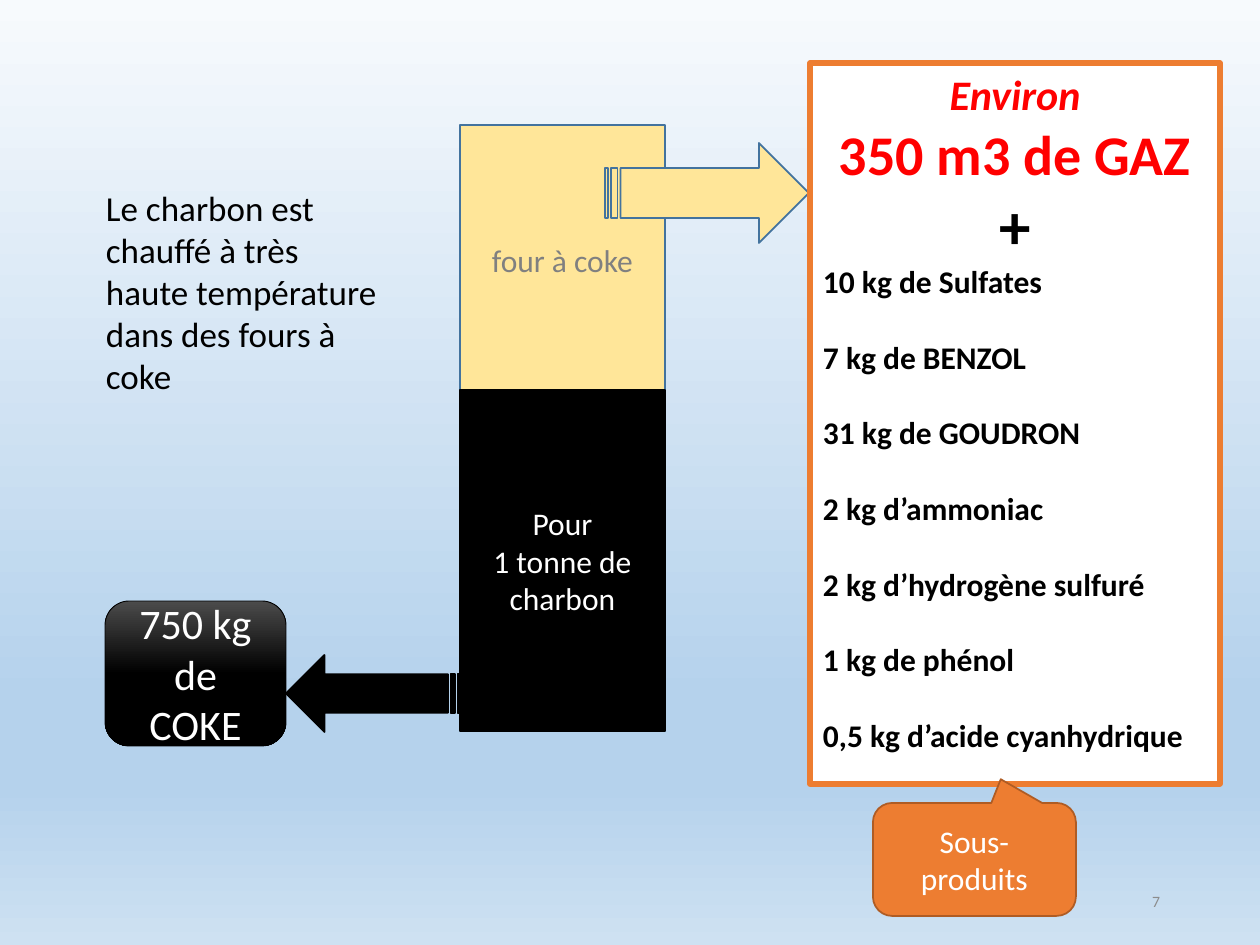
import pptx
import pptx.util
import pptx.dml.color
import pptx.enum.shapes
import pptx.enum.text
import pptx.oxml.ns
import lxml.etree

PX = 914400 // 126
FONT = "Calibri"
HEX = {
    "black": "000000", "white": "FFFFFF", "red": "FF0000", "gray": "808080",
    "pale": "8C8C8C", "sand": "FFE699", "blue": "43739E",
    "orange": "ED7D31", "rust": "AF5C24",
}
SKY = [(0, "F7FAFD"), (74, "B5D2EC"), (83, "B5D2EC"), (100, "CEE1F2")]
COAL = [(0, "4B4B4B"), (50, "000000"), (100, "000000")]
KIND = pptx.enum.shapes.MSO_SHAPE
ALIGN = pptx.enum.text.PP_ALIGN
ANCHOR = pptx.enum.text.MSO_ANCHOR
GOODS = [
    "10 kg de Sulfates", "7 kg de BENZOL", "31 kg de GOUDRON",
    "2 kg d’ammoniac", "2 kg d’hydrogène sulfuré", "1 kg de phénol",
    "0,5 kg d’acide cyanhydrique",
]


def tint(name):
    return pptx.dml.color.RGBColor.from_string(HEX[name])


def shade(fill, root, stops):
    """Fill from top to bottom with (percent, hex) stops."""
    qn = pptx.oxml.ns.qn
    fill.gradient()
    fill.gradient_angle = 270
    group = root.find(".//" + qn("a:gsLst"))
    for stop in list(group):
        group.remove(stop)
    for pos, code in stops:
        stop = lxml.etree.SubElement(group, qn("a:gs"), pos=str(pos * 1000))
        lxml.etree.SubElement(stop, qn("a:srgbClr"), val=code)


def draw(slide, kind, box, fill, line, width=1):
    """Add a preset shape; fill is a colour name or a list of stops."""
    shape = slide.shapes.add_shape(kind, *(n * PX for n in box))
    shape.shadow.inherit = False
    if isinstance(fill, list):
        shade(shape.fill, shape.element, fill)
    else:
        shape.fill.solid()
        shape.fill.fore_color.rgb = tint(fill)
    shape.line.color.rgb = tint(line)
    shape.line.width = pptx.util.Pt(width)
    return shape


def label(slide, box):
    return slide.shapes.add_textbox(*(n * PX for n in box))


def frame(shape, anchor=ANCHOR.MIDDLE, top=6):
    """Set up the text frame of a shape."""
    text = shape.text_frame
    form = {
        "word_wrap": True, "vertical_anchor": anchor, "margin_top": top * PX,
        "margin_bottom": 6 * PX, "margin_left": 13 * PX, "margin_right": 13 * PX,
    }
    for key, val in form.items():
        setattr(text, key, val)
    return text


def write(para, words, size, color, align=ALIGN.CENTER, **form):
    """Write one paragraph, with a line break at each newline."""
    para.alignment = align
    form.update(name=FONT, size=pptx.util.Pt(size))
    for num, part in enumerate(words.split("\n")):
        if num:
            para.add_line_break()
        run = para.add_run()
        run.text = part
        run.font.color.rgb = tint(color)
        for key, val in form.items():
            setattr(run.font, key, val)


def list_goods(text):
    """Gas yield, then the by-products."""
    write(text.paragraphs[0], "Environ", 24, "red", bold=True, italic=True)
    write(text.add_paragraph(), "350 m3 de GAZ", 32, "red", bold=True)
    write(text.add_paragraph(), "+", 36, "black", bold=True)
    for num, item in enumerate(GOODS):
        para = text.add_paragraph()
        write(para, item, 18, "black", ALIGN.LEFT, bold=True)
        if num:
            para.space_before = pptx.util.Pt(21.6)


def main():
    deck = pptx.Presentation()
    deck.slide_width = 1260 * PX
    deck.slide_height = 945 * PX
    slide = deck.slides.add_slide(deck.slide_layouts[6])
    shade(slide.background.fill, slide.element, SKY)

    # Slide number
    page = label(slide, (890, 876, 283, 50))
    write(frame(page).paragraphs[0], "7", 9, "pale", ALIGN.RIGHT)

    # Oven, with the gas going out and the coal inside
    oven = draw(slide, KIND.RECTANGLE, (460, 125, 205, 606), "sand", "blue")
    write(frame(oven, ANCHOR.TOP, 116).paragraphs[0], "four à coke", 18, "gray")
    draw(slide, KIND.STRIPED_RIGHT_ARROW, (605, 143, 204, 100), "sand", "blue")
    coal = draw(slide, KIND.RECTANGLE, (460, 390, 205, 341), "black", "black")
    write(frame(coal).paragraphs[0], "Pour\n1 tonne de charbon", 18, "white")

    # Coke
    coke = draw(slide, KIND.ROUNDED_RECTANGLE, (105, 601, 181, 145), COAL, "black", 0.5)
    write(frame(coke).paragraphs[0], "750 kg de COKE", 24, "white")
    arrow = draw(slide, KIND.STRIPED_RIGHT_ARROW, (286, 655, 174, 77), "black", "black")
    arrow.rotation = 180

    # Gas and by-products
    gas = draw(slide, KIND.RECTANGLE, (810, 63, 410, 721), "white", "orange", 3)
    list_goods(frame(gas, ANCHOR.TOP))
    note = draw(slide, KIND.ROUNDED_RECTANGULAR_CALLOUT, (873, 803, 203, 113),
                "orange", "rust")
    for num, val in enumerate((0.13, -0.71, 0.17)):
        note.adjustments[num] = val
    write(frame(note).paragraphs[0], "Sous-produits", 18, "white")

    # Process
    step = label(slide, (93, 180, 304, 224))
    write(frame(step, ANCHOR.TOP).paragraphs[0],
          "Le charbon est chauffé à très haute température dans des fours à coke",
          20, "black", ALIGN.LEFT)

    deck.save("out.pptx")


if __name__ == "__main__":
    main()
